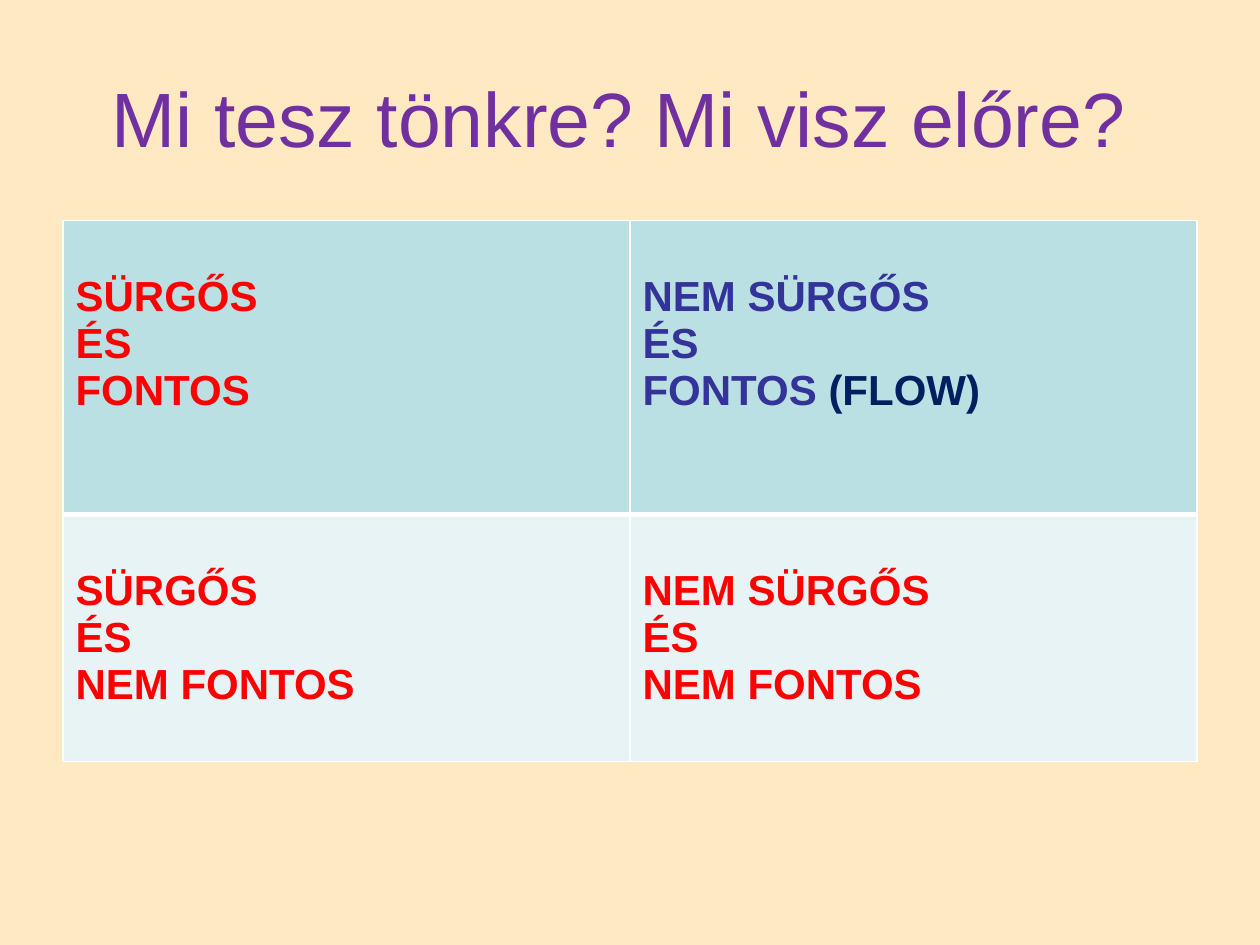
from dataclasses import dataclass

from lxml import etree
from pptx import Presentation
from pptx.dml.color import RGBColor
from pptx.enum.text import MSO_ANCHOR, PP_ALIGN
from pptx.oxml.ns import qn
from pptx.util import Cm, Pt

MIDDLE = MSO_ANCHOR.MIDDLE
CENTER = PP_ALIGN.CENTER


@dataclass(frozen=True)
class Theme:
    font: str = "Arial"
    back: str = "FFE9C3"
    title: str = "7030A0"
    red: str = "FF0000"
    blue: str = "333399"
    navy: str = "002060"
    line: str = "FFFFFF"
    fills: tuple = ("BBE0E3", "E7F3F4")
    big: int = 44
    body: int = 24
    thin: int = 1
    thick: int = 3


THEME = Theme()


def add_run(para, text, size, color, bold=False):
    run = para.add_run()
    run.text = text
    form = {"name": THEME.font, "size": Pt(size), "bold": bold}
    for key, value in form.items():
        setattr(run.font, key, value)
    run.font.color.rgb = RGBColor.from_string(color)


def add_edge(cell, side, width):
    """Draw one border; call before the cell is filled, as the schema orders it."""
    edge = etree.SubElement(cell._tc.get_or_add_tcPr(), qn(f"a:ln{side}"), w=str(Pt(width)))
    fill = etree.SubElement(edge, qn("a:solidFill"))
    etree.SubElement(fill, qn("a:srgbClr"), val=THEME.line)


deck = Presentation()
deck.slide_width, deck.slide_height = Cm(25.4), Cm(19.05)
slide = deck.slides.add_slide(deck.slide_layouts[6])
slide.background.fill.solid()
slide.background.fill.fore_color.rgb = RGBColor.from_string(THEME.back)

# Title
left, width = Cm(1.27), Cm(22.86)
frame = slide.shapes.add_textbox(left, Cm(0.76), width, Cm(3.18)).text_frame
for key, value in {"word_wrap": True, "vertical_anchor": MIDDLE}.items():
    setattr(frame, key, value)
para = frame.paragraphs[0]
para.alignment = CENTER
add_run(para, "Mi tesz tönkre? Mi visz előre? ", THEME.big, THEME.title)

# Matrix of urgent and important: each cell holds lines of (text, color) runs
red, blue, navy = THEME.red, THEME.blue, THEME.navy
matrix = [
    [
        [[("SÜRGŐS", red)], [("ÉS", red)], [("FONTOS", red)]],
        [[("NEM SÜRGŐS", blue)], [("ÉS", blue)], [("FONTOS ", blue), ("(FLOW)", navy)]],
    ],
    [
        [[("SÜRGŐS", red)], [("ÉS", red)], [("NEM FONTOS", red)]],
        [[("NEM SÜRGŐS", red)], [("ÉS", red)], [("NEM FONTOS", red)]],
    ],
]
heights = [Cm(5.92), Cm(4.98)]
table = slide.shapes.add_table(2, 2, left, Cm(4.45), width, sum(heights)).table
for key in ("first_row", "horz_banding"):
    setattr(table, key, False)

for r, row in enumerate(matrix):
    table.rows[r].height = heights[r]
    edges = {"L": THEME.thin, "R": THEME.thin, "T": THEME.thin, "B": THEME.thin}
    edges["B" if r == 0 else "T"] = THEME.thick
    for c, lines in enumerate(row):
        cell = table.cell(r, c)
        cell.margin_top = Cm(1.07)
        for side, size in edges.items():
            add_edge(cell, side, size)
        cell.fill.solid()
        cell.fill.fore_color.rgb = RGBColor.from_string(THEME.fills[r])
        for i, line in enumerate(lines):
            para = cell.text_frame.add_paragraph() if i else cell.text_frame.paragraphs[0]
            for text, color in line:
                add_run(para, text, THEME.body, color, bold=True)

deck.save("out.pptx")
